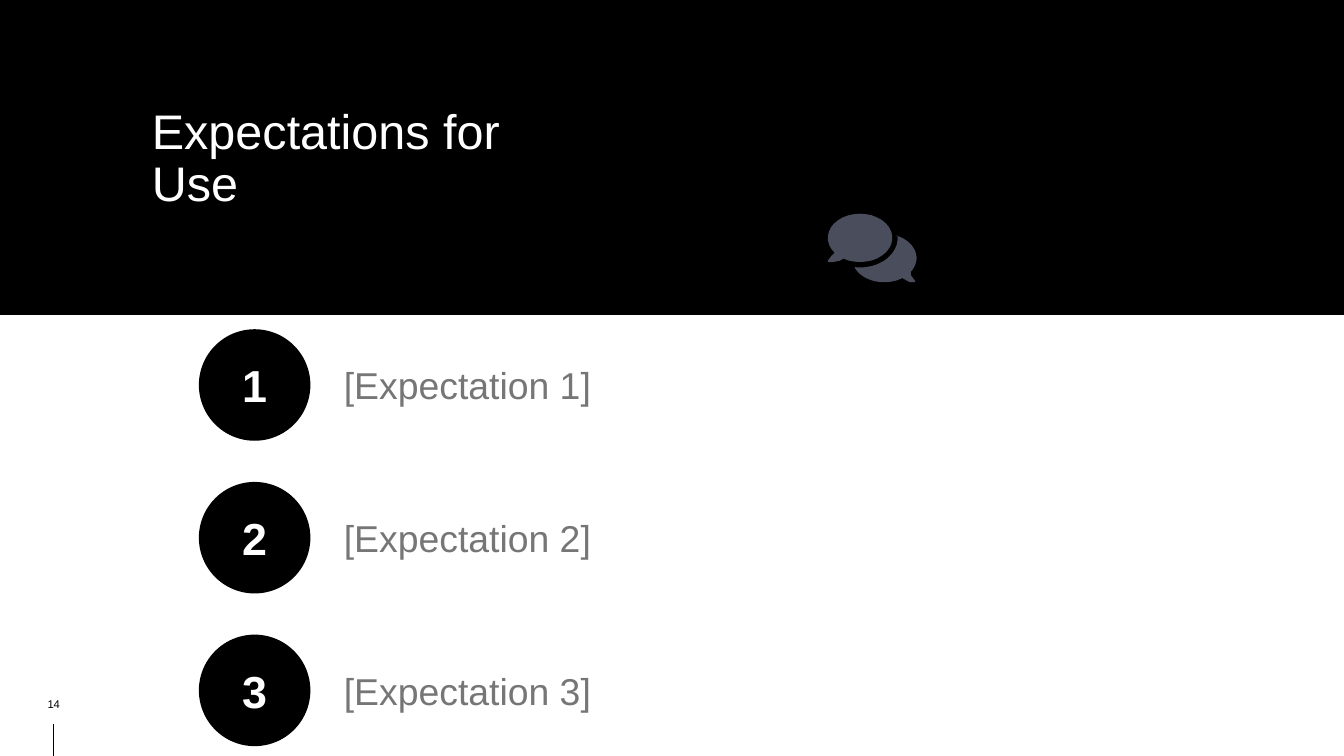
"""Build the "Expectations for Use" slide with three numbered rows."""
from math import cos, radians, sin

from pptx import Presentation, util as u
from pptx.dml.color import RGBColor
from pptx.enum import shapes, text
from pptx.oxml import parse_xml
from pptx.oxml.ns import nsdecls

HUES = {"ink": "000000", "paper": "FFFFFF", "grey": "767676", "slate": "4A4E5C"}
WIDE = u.Inches(10)
HIGH = WIDE * 9 // 16
LEFT, MID, TOP = text.PP_ALIGN.LEFT, text.PP_ALIGN.CENTER, text.MSO_ANCHOR.TOP


def write(shape, words, size, hue, align=LEFT, anchor=text.MSO_ANCHOR.MIDDLE,
          pad=(0.1, 0.1), bold=False):
    frame = shape.text_frame
    frame.text = words
    frame.word_wrap = True
    frame.auto_size = text.MSO_AUTO_SIZE.NONE
    frame.vertical_anchor = anchor
    frame.margin_left = frame.margin_right = u.Inches(pad[0])
    frame.margin_top = frame.margin_bottom = u.Inches(pad[1])
    line = frame.paragraphs[0]
    line.alignment = align
    font = line.runs[0].font
    font.name, font.size, font.bold = "Arial", u.Pt(size), bold
    font.color.rgb = RGBColor.from_string(HUES[hue])


def paint(shape, hue):
    shape.shadow.inherit = False
    shape.fill.solid()
    shape.fill.fore_color.rgb = RGBColor.from_string(HUES[hue])
    shape.line.fill.background()


deck = Presentation()
deck.slide_width, deck.slide_height = WIDE, HIGH
slide = deck.slides.add_slide(deck.slide_layouts[5])
tree = slide.shapes

band = tree.add_shape(shapes.MSO_SHAPE.RECTANGLE, 0, 0, WIDE, HIGH * 5 // 12)
paint(band, "ink")
rule = tree.add_connector(shapes.MSO_CONNECTOR.STRAIGHT, u.Inches(0.4), u.Inches(5.39),
                          u.Inches(0.4), HIGH)
rule.line.width = u.Pt(0.75)
rule.line.color.rgb = RGBColor.from_string(HUES["ink"])
rule._element.spPr.append(parse_xml(f"<a:effectLst {nsdecls('a')}/>"))

title = tree.title
rule._element.addnext(title._element)
title.left, title.top = u.Inches(1.06), u.Inches(0.76)
title.width, title.height = u.Inches(3.39), u.Inches(0.83)
write(title, "Expectations for Use", 26, "paper", anchor=TOP, pad=(0.07, 0.04))
title.text_frame.paragraphs[0].line_spacing = 0.9
page = tree.add_textbox(u.Inches(0.25), u.Inches(5.15), u.Inches(0.3), u.Inches(0.18))
write(page, "14", 6, "ink", align=MID, pad=(0.07, 0.04))

front, back, gap = (6.4, 1.77, 0.24, 0.18), (6.58, 1.92, 0.24, 0.18), (6.4, 1.77, 0.28, 0.22)
arcs = [
    [(front, 142, 481, [(6.25, 1.94), (6.2, 1.95), (6.16, 1.95), (6.16, 1.94), (6.19, 1.9)])],
    [(back, -68, 35, [(6.78, 2.05), (6.81, 2.09), (6.81, 2.1), (6.77, 2.1)]),
     (back, 56, 157, []),
     (gap, 97, -5, [])],
]
UNIT = 1000
pen = None
for bubble in arcs:
    dots = []
    for (x, y, rx, ry), start, stop, tail in bubble:
        for step in range(33):
            turn = radians(start + (stop - start) * step / 32)
            dots.append((x + rx * cos(turn), y + ry * sin(turn)))
        dots += tail
    dots = [(round(x * UNIT), round(y * UNIT)) for x, y in dots]
    if pen is None:
        pen = tree.build_freeform(*dots[0], scale=u.Inches(1) / UNIT)
    else:
        pen.move_to(*dots[0])
    pen.add_line_segments(dots[1:], close=True)
paint(pen.convert_to_shape(), "slate")

SIZE, FIRST, PITCH = u.Inches(0.83), u.Inches(2.45), HIGH * 0.202
for row in range(3):
    top = int(FIRST + row * PITCH)
    group = tree.add_group_shape().shapes
    disc = group.add_shape(shapes.MSO_SHAPE.OVAL, u.Inches(1.48), top, SIZE, SIZE)
    paint(disc, "ink")
    write(disc, str(row + 1), 24, "paper", align=MID, bold=True)
    label = group.add_textbox(u.Inches(2.46), top, u.Inches(6.06), SIZE)
    write(label, f"[Expectation {row + 1}]", 20, "grey")

deck.save("out.pptx")
